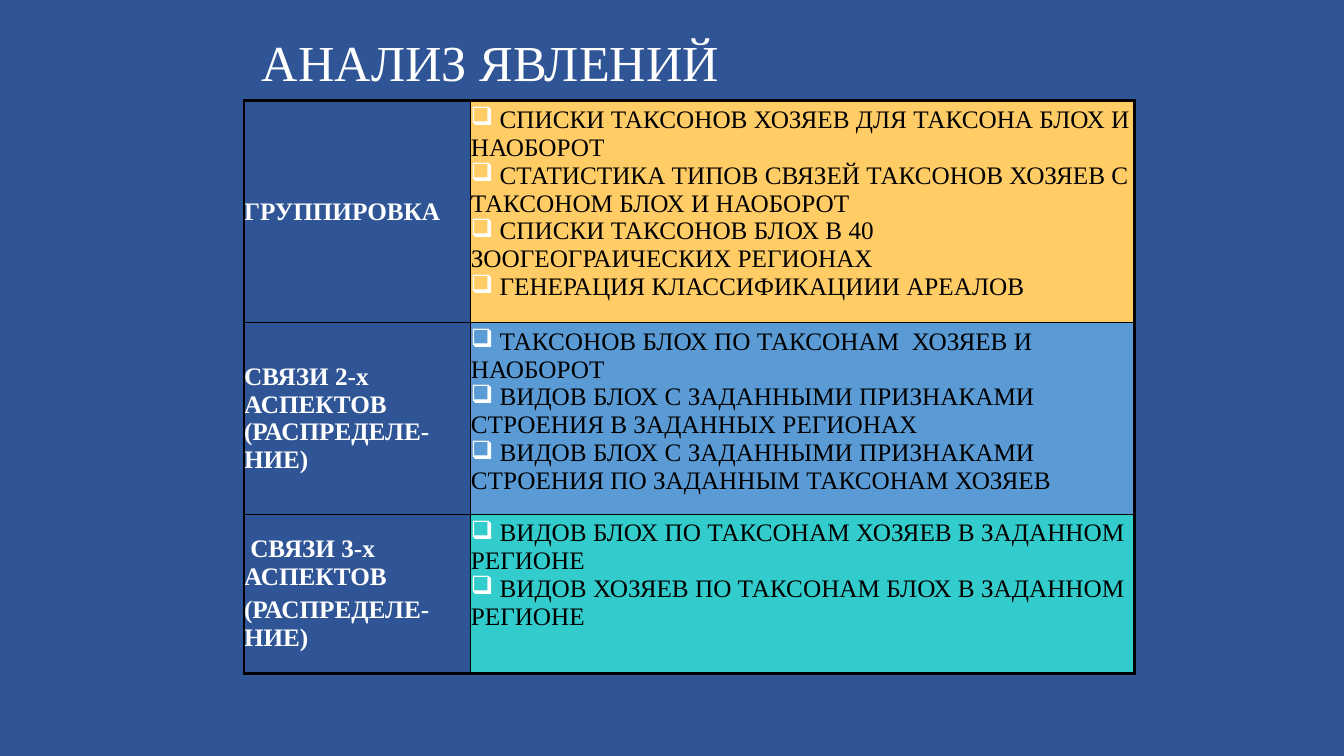
from pptx import Presentation, util as u
from pptx.dml.color import RGBColor
from pptx.enum import text
from pptx.oxml import ns
from lxml import etree

COLORS = {"background": "2F5597", "white": "FFFFFF", "black": "000000",
          "grouping": "FFCC66", "two aspects": "5B9BD5", "three aspects": "33CCCC"}
FONT = "Times New Roman"
THICK, THIN = 2.25, 1

# Each row: height, fill colour, heading paragraphs, list items
ROWS = [
    (1.65, "grouping", ["ГРУППИРОВКА"], [
        "CПИСКИ ТАКСОНОВ ХОЗЯЕВ ДЛЯ ТАКСОНА БЛОХ И НАОБОРОТ",
        "СТАТИСТИКА ТИПОВ СВЯЗЕЙ ТАКСОНОВ ХОЗЯЕВ С ТАКСОНОМ БЛОХ И НАОБОРОТ",
        "СПИСКИ ТАКСОНОВ БЛОХ В 40 ЗООГЕОГРАИЧЕСКИХ РЕГИОНАХ",
        "ГЕНЕРАЦИЯ КЛАССИФИКАЦИИИ АРЕАЛОВ"]),
    (1.82, "two aspects", ["СВЯЗИ 2-х АСПЕКТОВ (РАСПРЕДЕЛЕ-НИЕ)"], [
        "ТАКСОНОВ БЛОХ ПО ТАКСОНАМ  ХОЗЯЕВ И НАОБОРОТ",
        "ВИДОВ БЛОХ С ЗАДАННЫМИ ПРИЗНАКАМИ СТРОЕНИЯ В ЗАДАННЫХ РЕГИОНАХ",
        "ВИДОВ БЛОХ С ЗАДАННЫМИ ПРИЗНАКАМИ СТРОЕНИЯ ПО ЗАДАННЫМ ТАКСОНАМ ХОЗЯЕВ"]),
    (1.58, "three aspects", [" СВЯЗИ 3-х АСПЕКТОВ", "(РАСПРЕДЕЛЕ-НИЕ)"], [
        "ВИДОВ БЛОХ ПО ТАКСОНАМ ХОЗЯЕВ В ЗАДАННОМ РЕГИОНЕ",
        "ВИДОВ ХОЗЯЕВ ПО ТАКСОНАМ БЛОХ В ЗАДАННОМ РЕГИОНЕ"]),
]
COLUMN_WIDTHS = [2.25, 6.58]


def add_run(paragraph, words, size, color, bold=False):
    run = paragraph.add_run()
    run.text = words
    run.font.name = FONT
    run.font.size = u.Pt(size)
    run.font.bold = bold
    run.font.color.rgb = RGBColor.from_string(COLORS[color])


def add_element(parent, tag, **attributes):
    return etree.SubElement(parent, ns.qn(tag), attributes)


presentation = Presentation()
presentation.slide_width = u.Inches(13.33)
presentation.slide_height = u.Inches(7.5)
slide = presentation.slides.add_slide(presentation.slide_layouts[6])
slide.background.fill.solid()
slide.background.fill.fore_color.rgb = RGBColor.from_string(COLORS["background"])

# Title
title = slide.shapes.add_textbox(u.Inches(2.5), u.Inches(0.3), u.Inches(8.17), u.Inches(0.7))
title.text_frame.word_wrap = True
title.text_frame.vertical_anchor = text.MSO_ANCHOR.MIDDLE
title.text_frame.paragraphs[0].line_spacing = 0.9
add_run(title.text_frame.paragraphs[0], "АНАЛИЗ ЯВЛЕНИЙ", 36, "white")

# Table grid
table = slide.shapes.add_table(len(ROWS), len(COLUMN_WIDTHS), u.Inches(2.42), u.Inches(1),
                               u.Inches(sum(COLUMN_WIDTHS)),
                               u.Inches(sum(row[0] for row in ROWS))).table
table.first_row = table.horz_banding = False
for column, width in zip(table.columns, COLUMN_WIDTHS):
    column.width = u.Inches(width)

for row_index, (height, fill, heading, items) in enumerate(ROWS):
    table.rows[row_index].height = u.Inches(height)
    for column_index, lines in enumerate([heading, items]):
        cell = table.cell(row_index, column_index)
        is_heading = column_index == 0
        cell.margin_left = cell.margin_right = 0
        cell.margin_top = cell.margin_bottom = u.Inches(0.05)
        cell.vertical_anchor = text.MSO_ANCHOR.MIDDLE if is_heading else text.MSO_ANCHOR.TOP

        # Borders: thick around the table, thin inside
        outer_sides = {"a:lnL": is_heading, "a:lnR": not is_heading,
                       "a:lnT": row_index == 0, "a:lnB": row_index == len(ROWS) - 1}
        properties = cell._tc.get_or_add_tcPr()
        for side, is_outer in outer_sides.items():
            line = add_element(properties, side, w=str(u.Pt(THICK if is_outer else THIN)))
            add_element(add_element(line, "a:solidFill"), "a:srgbClr", val=COLORS["black"])

        # Fill
        if is_heading:
            cell.fill.background()
        else:
            cell.fill.solid()
            cell.fill.fore_color.rgb = RGBColor.from_string(COLORS[fill])

        # Text
        for index, words in enumerate(lines):
            frame = cell.text_frame
            paragraph = frame.add_paragraph() if index else frame.paragraphs[0]
            if is_heading:
                if index:
                    paragraph.space_before = u.Pt(3.6)
                add_run(paragraph, words, 18, "white", bold=True)
            else:
                bullet = paragraph._p.get_or_add_pPr()
                add_element(add_element(bullet, "a:buClr"), "a:srgbClr", val=COLORS["white"])
                add_element(bullet, "a:buChar", char="❑")
                add_run(paragraph, " " + words, 18, "black")

presentation.save("out.pptx")
